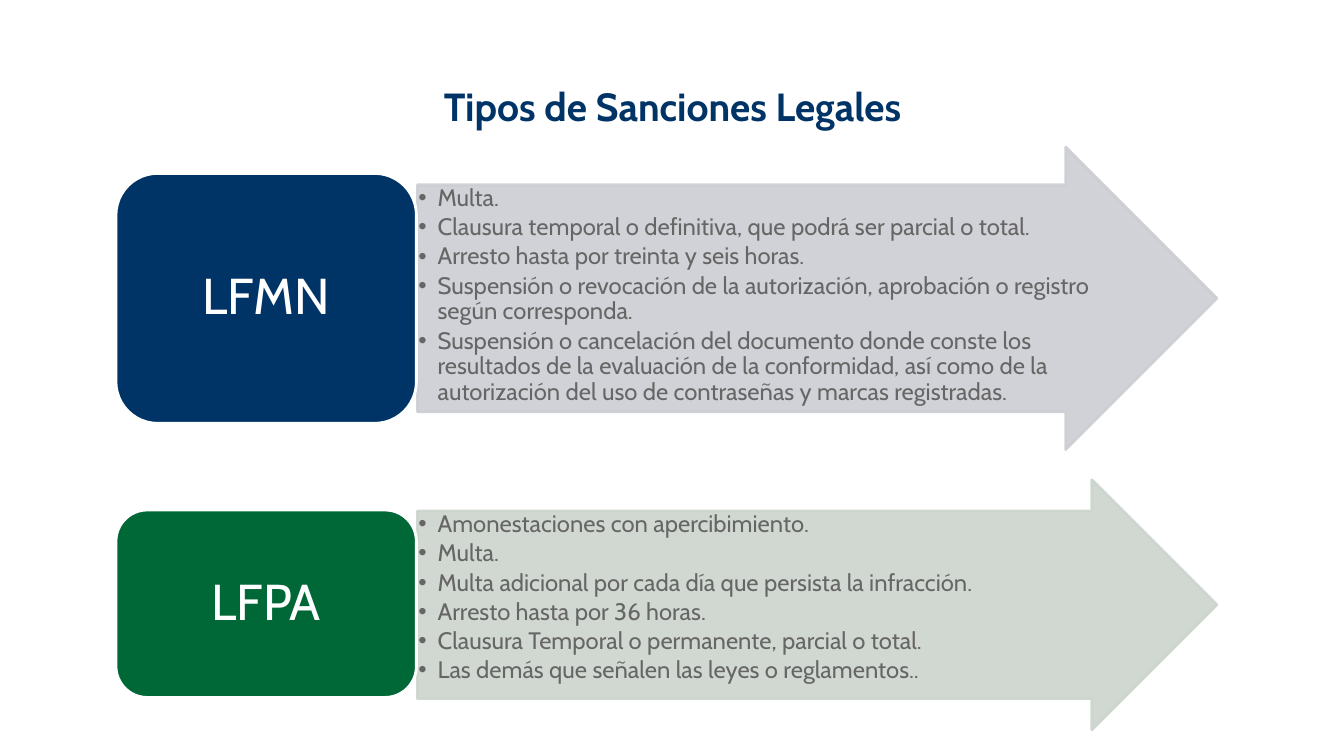
from lxml import etree
from pptx import Presentation
from pptx.dml.color import RGBColor
from pptx.enum.shapes import MSO_SHAPE
from pptx.enum.text import MSO_ANCHOR, MSO_AUTO_SIZE, PP_ALIGN
from pptx.oxml.ns import qn
from pptx.util import Inches, Pt

ARROW, ROUNDED = MSO_SHAPE.RIGHT_ARROW, MSO_SHAPE.ROUNDED_RECTANGLE
TOP, MIDDLE = MSO_ANCHOR.TOP, MSO_ANCHOR.MIDDLE
LEFT, CENTER = PP_ALIGN.LEFT, PP_ALIGN.CENTER
NO_AUTOFIT = MSO_AUTO_SIZE.NONE
TWO_CONTENT_LAYOUT = 3

NAVY, GREEN, GRAY, WHITE = "003366", "006837", "666666", "FFFFFF"
TITLE_FORMAT = {"size": Pt(28), "bold": True}
LABEL_FORMAT = {"size": Pt(36), "bold": False}
LIST_FORMAT = {"size": Pt(17), "bold": False}

LABEL_LEFT, LABEL_WIDTH = 1.15, 2.98
ARROW_LEFT, ARROW_WIDTH = 4.14, 7.93
ARROW_BODY = 0.75  # share of the arrow height taken by its shaft

# One entry per law: label, colours, arrow and label extents, sanctions
LAWS = [
    {"label": "LFMN", "color": NAVY, "tint": "CCCED3",
     "arrow": (1.46, 3), "box": (1.72, 2.48), "list_width": 6.81,
     "sanctions": [
         "Multa.",
         "Clausura temporal o definitiva, que podrá ser parcial o total.",
         "Arresto hasta por treinta y seis horas.",
         "Suspensión o revocación de la autorización, aprobación o registro "
         "según corresponda.",
         "Suspensión o cancelación del documento donde conste los resultados "
         "de la evaluación de la conformidad, así como de la autorización del "
         "uso de contraseñas y marcas registradas."]},
    {"label": "LFPA", "color": GREEN, "tint": "CCD4CE",
     "arrow": (4.76, 2.48), "box": (5.06, 1.86), "list_width": 7,
     "sanctions": [
         "Amonestaciones con apercibimiento.",
         "Multa.",
         "Multa adicional por cada día que persista la infracción.",
         "Arresto hasta por 36 horas.",
         "Clausura Temporal o permanente, parcial o total.",
         "Las demás que señalen las leyes o reglamentos.."]},
]


def rgb(color):
    return RGBColor.from_string(color)


class SlideBuilder:
    font_name = "Cabin"

    def __init__(self, slide):
        self.slide = slide

    def place(self, shape, left, top, width, height):
        shape.left, shape.top = Inches(left), Inches(top)
        shape.width, shape.height = Inches(width), Inches(height)

    def frame(self, shape, anchor, horizontal, vertical):
        text_frame = shape.text_frame
        settings = {
            "word_wrap": True, "auto_size": NO_AUTOFIT,
            "vertical_anchor": anchor,
            "margin_left": Inches(horizontal), "margin_right": Inches(horizontal),
            "margin_top": Inches(vertical), "margin_bottom": Inches(vertical),
        }
        for name, value in settings.items():
            setattr(text_frame, name, value)
        return text_frame

    def add_text(self, paragraph, text, color, text_format, **layout):
        settings = {"space_before": Pt(0), "space_after": Pt(0), **layout}
        for name, value in settings.items():
            setattr(paragraph, name, value)
        run = paragraph.add_run()
        run.text = text
        for name, value in {"name": self.font_name, **text_format}.items():
            setattr(run.font, name, value)
        run.font.color.rgb = rgb(color)

    def title(self, text, *box):
        shape = self.slide.shapes.title
        self.place(shape, *box)
        text_frame = self.frame(shape, MIDDLE, 0, 0)
        self.add_text(text_frame.paragraphs[0], text, NAVY, TITLE_FORMAT,
                      alignment=CENTER)

    def block(self, kind, box, fill, line, adjustments=(), alpha=100):
        shape = self.slide.shapes.add_shape(kind, *map(Inches, box))
        shape.shadow.inherit = False
        for index, value in enumerate(adjustments):
            shape.adjustments[index] = value
        shape.fill.solid()
        shape.fill.fore_color.rgb = rgb(fill)
        shape.line.color.rgb = rgb(line)
        shape.line.width = Pt(2)
        if alpha < 100:
            for color in shape.element.spPr.iter(qn("a:srgbClr")):
                etree.SubElement(color, qn("a:alpha"), val=str(alpha * 1000))
        return shape

    def label(self, text, box, fill):
        shape = self.block(ROUNDED, box, fill, WHITE)
        text_frame = self.frame(shape, MIDDLE, 0.15, 0.07)
        self.add_text(text_frame.paragraphs[0], text, WHITE, LABEL_FORMAT,
                      alignment=CENTER, line_spacing=0.9)

    def bullets(self, placeholder, items, *box):
        self.place(placeholder, *box)
        # Bring the list in front of its arrow
        self.slide.shapes.element.append(placeholder.element)
        text_frame = self.frame(placeholder, TOP, 0.01, 0.01)
        for index, item in enumerate(items):
            paragraph = (text_frame.add_paragraph() if index
                         else text_frame.paragraphs[0])
            properties = paragraph._p.get_or_add_pPr()
            properties.set("marL", str(Inches(0.19)))
            properties.set("indent", str(-Inches(0.19)))
            etree.SubElement(properties, qn("a:buFont"), typeface="Arial")
            etree.SubElement(properties, qn("a:buChar"), char="•")
            self.add_text(paragraph, item, GRAY, LIST_FORMAT, level=1,
                          alignment=LEFT, line_spacing=0.9,
                          space_after=Pt(2.5))


def main():
    presentation = Presentation()
    presentation.slide_width = Inches(13.33)
    presentation.slide_height = Inches(7.5)
    layout = presentation.slide_layouts[TWO_CONTENT_LAYOUT]
    slide = presentation.slides.add_slide(layout)
    builder = SlideBuilder(slide)

    # Title
    builder.title("Tipos de Sanciones Legales", 0.73, 0.64, 11.88, 0.82)

    # Each law: arrow, list of sanctions, label
    lists = list(slide.placeholders)[1:]
    for law, placeholder in zip(LAWS, lists):
        top, height = law["arrow"]
        builder.block(ARROW, (ARROW_LEFT, top, ARROW_WIDTH, height),
                      law["tint"], law["tint"], (ARROW_BODY, 0.5), alpha=90)
        builder.bullets(placeholder, law["sanctions"], ARROW_LEFT,
                        top + height * (1 - ARROW_BODY) / 2,
                        law["list_width"], height * ARROW_BODY)
        box_top, box_height = law["box"]
        builder.label(law["label"],
                      (LABEL_LEFT, box_top, LABEL_WIDTH, box_height),
                      law["color"])

    presentation.save("out.pptx")


if __name__ == "__main__":
    main()
